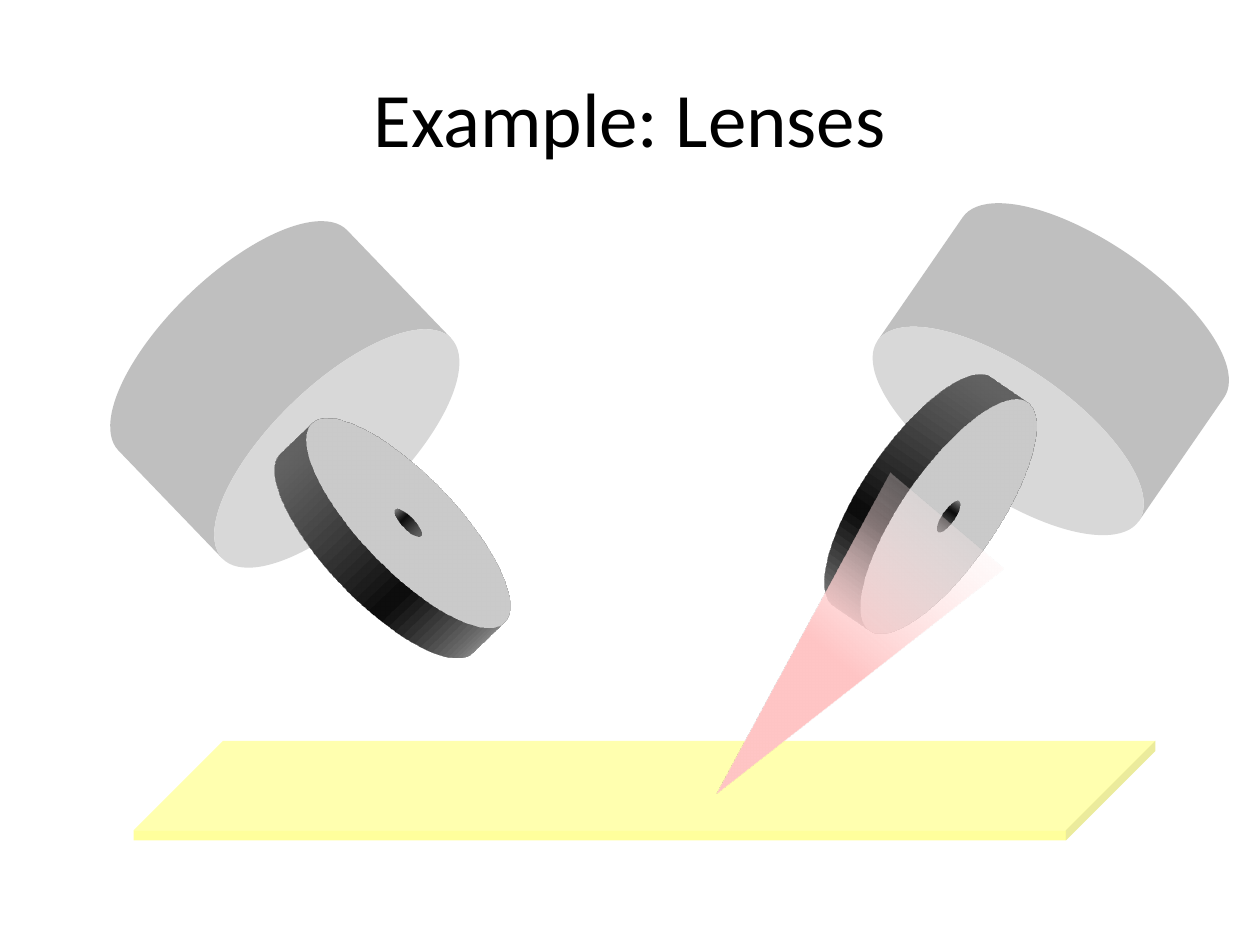
from lxml import etree
from pptx import Presentation
from pptx.dml.color import RGBColor
from pptx.enum.shapes import MSO_SHAPE
from pptx.enum.text import MSO_ANCHOR, PP_ALIGN
from pptx.oxml.ns import qn
from pptx.util import Inches, Pt

CUBE, CAN, DONUT, TRIANGLE = (
    MSO_SHAPE.CUBE, MSO_SHAPE.CAN, MSO_SHAPE.DONUT, MSO_SHAPE.ISOSCELES_TRIANGLE)
MIDDLE, CENTER = MSO_ANCHOR.MIDDLE, PP_ALIGN.CENTER

COLORS = {"text": "000000", "plate": "FFFF00", "glass": "BFBFBF", "beam": "FFC5C5"}
BEAM_STOPS = [(50, "FFC5C5", 100), (100, "FFFFFF", 0), (100, "FFE3E3", 100)]


def add_solid(shapes, kind, left, top, width, height, color, turn=0, adjustment=None):
    shape = shapes.add_shape(kind, Inches(left), Inches(top), Inches(width), Inches(height))
    shape.shadow.inherit = False
    shape.fill.solid()
    shape.fill.fore_color.rgb = RGBColor.from_string(COLORS[color])
    shape.line.fill.background()
    shape.rotation = turn
    if adjustment is not None:
        shape.adjustments[0] = adjustment
    return shape


def add_depth(shape, depth, turn):
    """Turn the shape in space by degrees and extrude it to the given depth."""
    properties = shape.fill._xPr
    scene = etree.SubElement(properties, qn("a:scene3d"))
    camera = etree.SubElement(scene, qn("a:camera"), prst="orthographicFront")
    etree.SubElement(camera, qn("a:rot"), lat="0", lon=str(turn * 60000), rev="0")
    etree.SubElement(scene, qn("a:lightRig"), rig="threePt", dir="t")
    etree.SubElement(properties, qn("a:sp3d"), extrusionH=str(depth))


deck = Presentation()
deck.slide_width, deck.slide_height = Inches(10), Inches(7.5)
page = deck.slides.add_slide(deck.slide_layouts[6])

# Translucent plate
plate = add_solid(page.shapes, CUBE, 1.06, 5.88, 8.11, 0.79, "plate", adjustment=0.898)
plate_color = plate.fill._xPr.find(qn("a:solidFill"))[0]
etree.SubElement(plate_color, qn("a:alpha"), val="39000")

# Title
box = page.shapes.add_textbox(Inches(0.5), Inches(0.3), Inches(9), Inches(1.25))
box.text_frame.word_wrap = True
box.text_frame.vertical_anchor = MIDDLE
para = box.text_frame.paragraphs[0]
para.alignment = CENTER
span = para.add_run()
span.text = "Example: Lenses"
span.font.name, span.font.size = "Calibri", Pt(44)
span.font.color.rgb = RGBColor.from_string(COLORS["text"])

# Lens units: barrel corner, disc corner, turn, whether the beam follows
units = [(7.08, 1.83, 6.43, 3, 214.6, True),
         (1, 2.03, 2.14, 3.05, 136.1, False)]

for barrel_left, barrel_top, disc_left, disc_top, turn, has_beam in units:
    unit = page.shapes.add_group_shape()
    add_solid(unit.shapes, CAN, barrel_left, barrel_top, 2.52, 2.2, "glass", turn, 0.459)
    disc = add_solid(unit.shapes, DONUT, disc_left, disc_top, 2.2, 2.2, "glass", turn, 0.433)
    add_depth(disc, Inches(0.37), 70)

    # Light beam, fading towards the lens
    if has_beam:
        beam = add_solid(page.shapes, TRIANGLE, 6.01, 3.8, 1.18, 2.83, "beam", 220.2)
        beam.fill.gradient()
        beam.fill.gradient_angle = 270
        stop_list = beam.fill._xPr.find(qn("a:gradFill")).find(qn("a:gsLst"))
        for old_stop in list(stop_list):
            stop_list.remove(old_stop)
        for percent, color, opacity in BEAM_STOPS:
            stop = etree.SubElement(stop_list, qn("a:gs"), pos=str(percent * 1000))
            tint = etree.SubElement(stop, qn("a:srgbClr"), val=color)
            if opacity < 100:
                etree.SubElement(tint, qn("a:alpha"), val=str(opacity * 1000))

deck.save("out.pptx")
